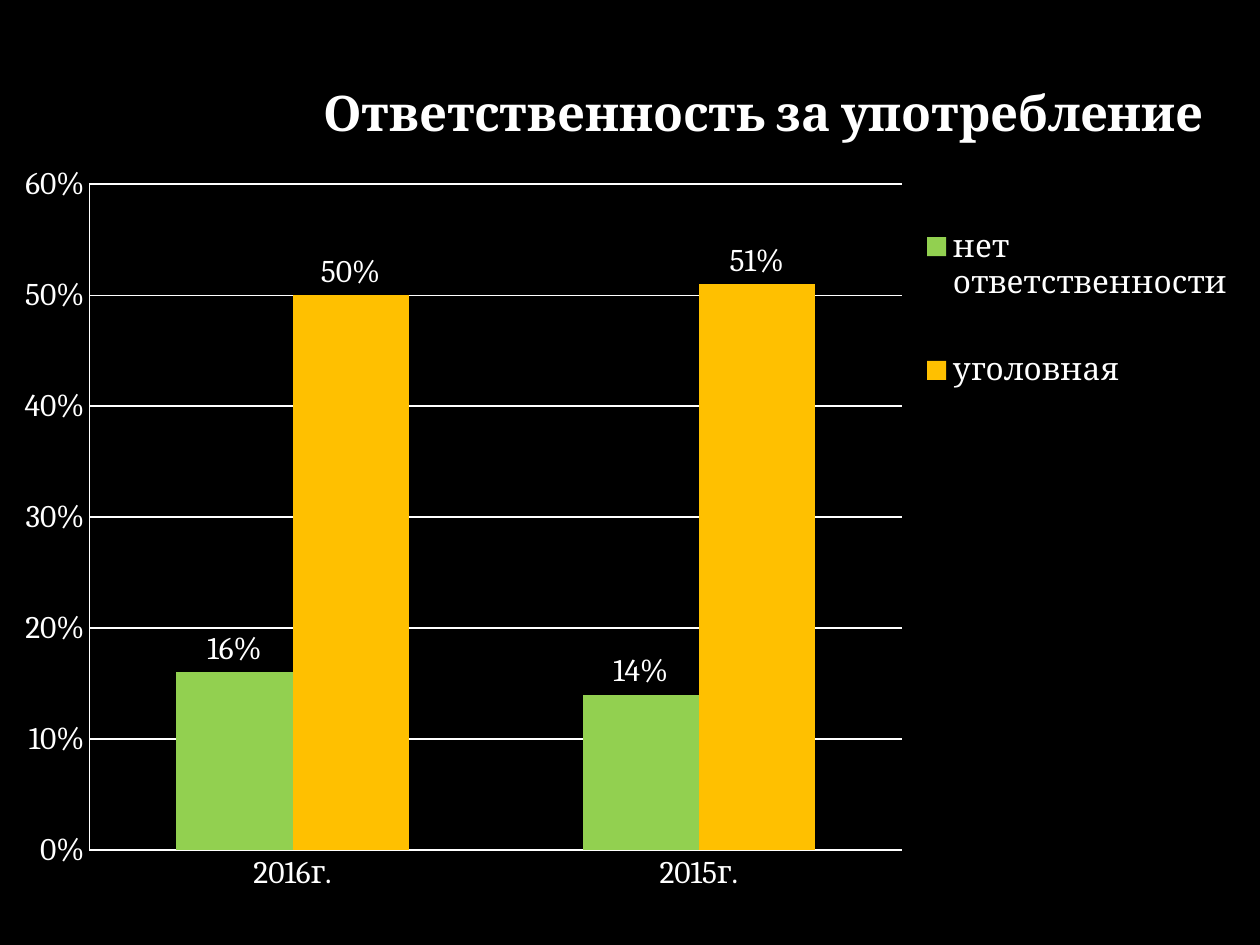
import pptx
import pptx.chart.data
import pptx.dml.color
import pptx.enum.chart
import pptx.oxml
import pptx.util
from pptx.oxml.ns import nsdecls

Pt = pptx.util.Pt
enum = pptx.enum.chart
inks = {"back": "000000", "text": "FFFFFF", "none": "92D050", "crime": "FFC000"}


def ink(name):
    return pptx.dml.color.RGBColor.from_string(inks[name])


def place(part, index, inner=False, **spots):
    """Give a chart part a manual layout, in fractions of the chart."""
    for old in part.xpath("c:layout"):
        part.remove(old)
    tags = '<c:layoutTarget val="inner"/>' if inner else ""
    tags += '<c:xMode val="edge"/><c:yMode val="edge"/>'
    tags += "".join(f'<c:{key} val="{val}"/>' for key, val in spots.items())
    part.insert(index, pptx.oxml.parse_xml(
        f'<c:layout {nsdecls("c")}><c:manualLayout>{tags}</c:manualLayout></c:layout>'))


# Slide
deck = pptx.Presentation()
deck.slide_width, deck.slide_height = Pt(720), Pt(540)
slide = deck.slides.add_slide(deck.slide_layouts[6])
slide.background.fill.solid()
slide.background.fill.fore_color.rgb = ink("back")

# Chart
data = pptx.chart.data.CategoryChartData(number_format="0%")
data.categories = ["2016г.", "2015г."]
data.add_series("нет ответственности", [0.16, 0.14])
data.add_series("уголовная", [0.5, 0.51])
chart = slide.shapes.add_chart(enum.XL_CHART_TYPE.COLUMN_CLUSTERED,
                               Pt(0), Pt(22.3), Pt(720), Pt(496.8), data).chart
chart.font.name = "Cambria"
chart.font.size = Pt(18)
chart.font.color.rgb = ink("text")

# Title
chart.has_title = True
head = chart.chart_title.text_frame
head.text = "Ответственность за употребление"
font = head.paragraphs[0].font
font.name, font.size, font.bold = "Cambria", Pt(28), True
font.color.rgb = ink("text")
chart.chart_title.include_in_layout = False

# Columns and labels
plot = chart.plots[0]
plot.gap_width, plot.overlap = 150, 0
plot.vary_by_categories = False
for bars, name in zip(plot.series, ["none", "crime"]):
    bars.format.fill.solid()
    bars.format.fill.fore_color.rgb = ink(name)
    tags = bars.data_labels
    tags.show_value = True
    tags.number_format, tags.number_format_is_linked = "0%", False
    tags.position = enum.XL_LABEL_POSITION.OUTSIDE_END

# Axes
scale = chart.value_axis
scale.minimum_scale, scale.maximum_scale, scale.major_unit = 0, 0.6, 0.1
scale.has_major_gridlines = True
scale.tick_labels.number_format = "0%"
scale.tick_labels.number_format_is_linked = False
for axis in (chart.category_axis, scale):
    axis.major_tick_mark = axis.minor_tick_mark = enum.XL_TICK_MARK.NONE
for item in (chart.category_axis, scale, scale.major_gridlines):
    item.format.line.width = Pt(0.75)
    item.format.line.color.rgb = ink("text")

# Legend
chart.has_legend = True
chart.legend.position = enum.XL_LEGEND_POSITION.RIGHT
chart.legend.include_in_layout = False

# Places of the parts
root = chart.element
place(root.xpath("c:chart/c:title")[0], 1, x=0.25, y=0.04)
place(root.xpath("c:chart/c:plotArea")[0], 0, inner=True,
      x=0.071, y=0.167, w=0.645, h=0.766)
place(root.xpath("c:chart/c:legend")[0], 1, x=0.72, y=0.16, w=0.27, h=0.3)

deck.save("out.pptx")
